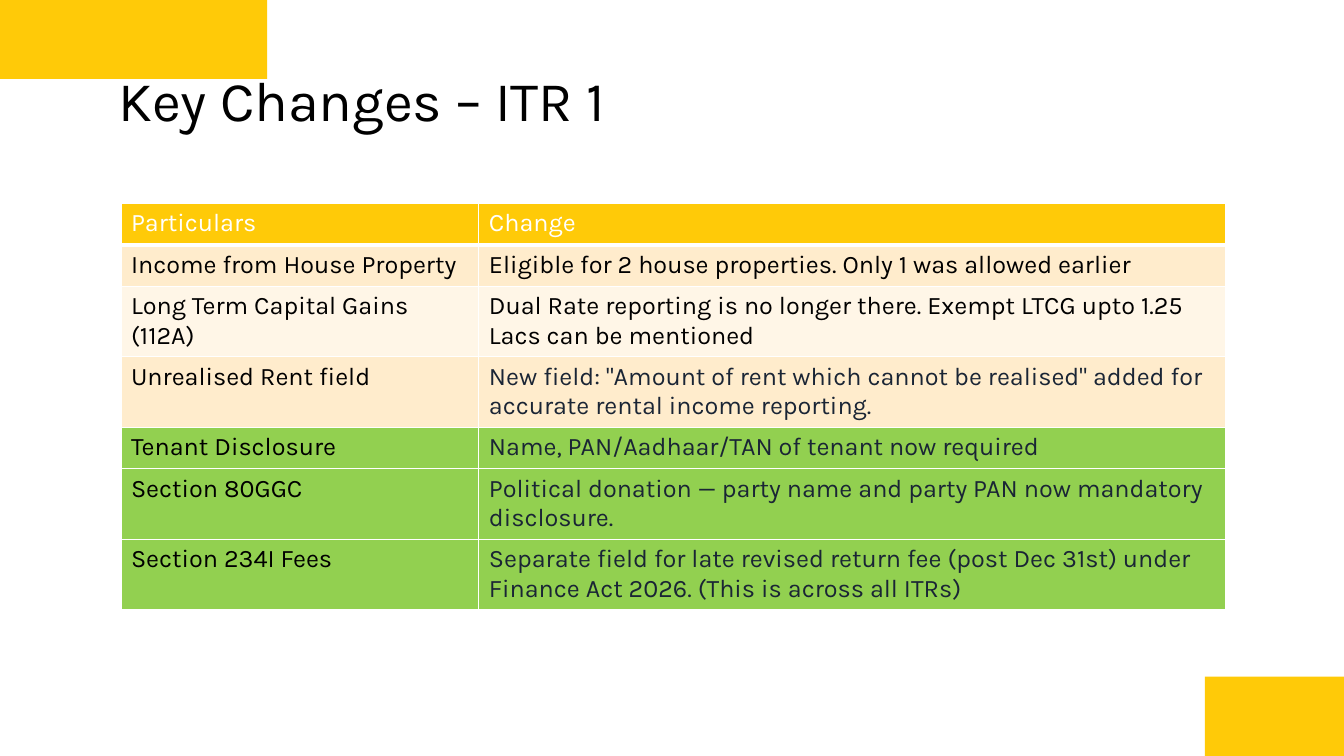
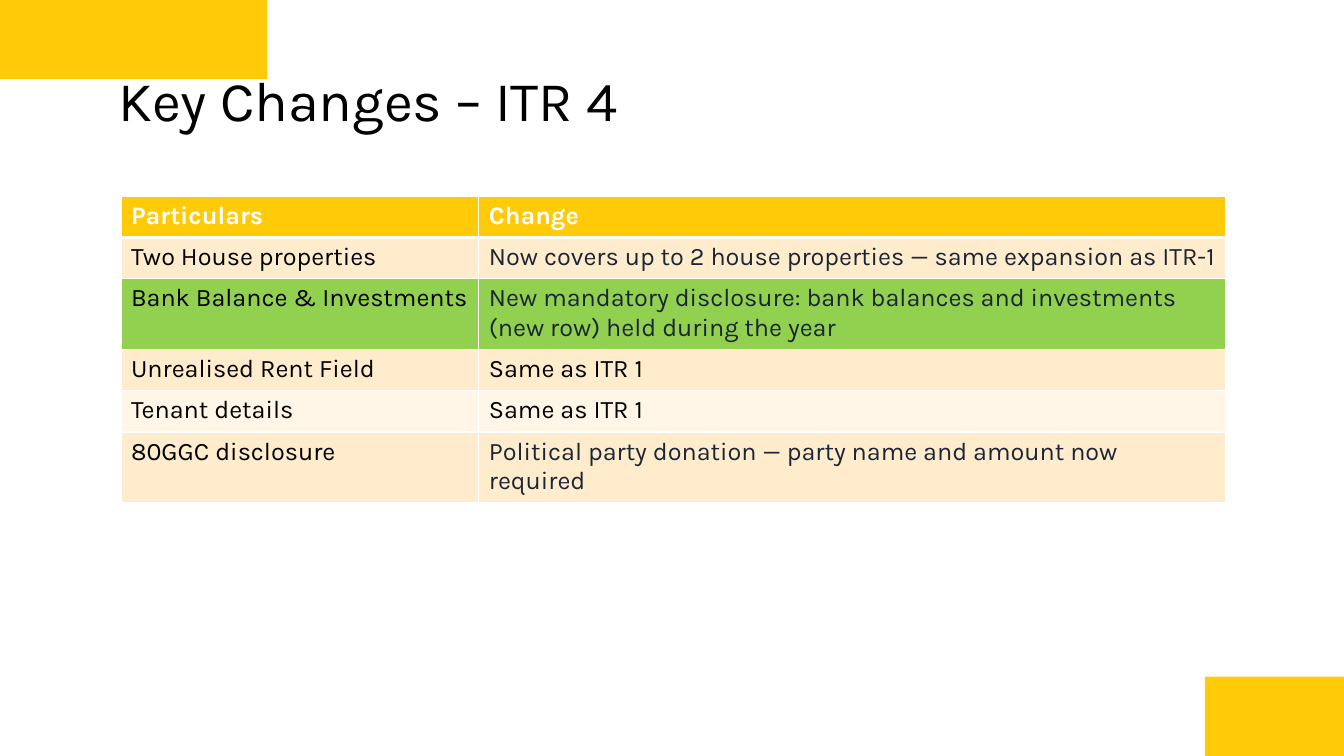
from pptx import Presentation
from pptx.dml.color import RGBColor
from pptx.enum.shapes import MSO_SHAPE
from pptx.enum.text import MSO_ANCHOR
from pptx.oxml import parse_xml
from pptx.oxml.ns import nsdecls
from pptx.util import Inches, Pt

RECTANGLE = MSO_SHAPE.RECTANGLE
MIDDLE = MSO_ANCHOR.MIDDLE

FONT = "Karla"
GOLD, GREEN = "FFCA08", "92D050"
STRIPES = ("FFECCC", "FFF6E7")
WHITE, BLACK, NAVY = "FFFFFF", "000000", "1A2535"

# Lengths are percent of the slide's width (x) and height (y).
BANDS = ((89.65, 89.5, 10.35, 10.5), (0, 0, 19.88, 10.45))
TITLE_BOX = (8.78, 5.33, 82.5, 15.6)
TABLE_LEFT = 9
COLUMN_WIDTHS = (26.63, 55.59)
ROW_HEIGHT = 5.47
HEADER = ("Particulars", "Change")


def rgb(hex_string):
    return RGBColor.from_string(hex_string)


class Deck:
    """Holds the shared style and the slide being built."""

    def __init__(self):
        self.prs = Presentation()
        self.prs.slide_width = Inches(13.33)
        self.prs.slide_height = Inches(7.5)
        self.slide = None

    def x(self, percent):
        return round(self.prs.slide_width * percent / 100)

    def y(self, percent):
        return round(self.prs.slide_height * percent / 100)

    def box(self, left, top, width, height):
        return self.x(left), self.y(top), self.x(width), self.y(height)

    def new_slide(self, title):
        self.slide = self.prs.slides.add_slide(self.prs.slide_layouts[6])
        for band in BANDS:
            self.band(band)
        self.title(title)

    def band(self, place):
        band = self.slide.shapes.add_shape(RECTANGLE, *self.box(*place))
        band.shadow.inherit = False
        band.fill.solid()
        band.fill.fore_color.rgb = rgb(GOLD)
        band.line.fill.background()

    def title(self, text):
        frame = self.slide.shapes.add_textbox(*self.box(*TITLE_BOX)).text_frame
        layout = {"word_wrap": True, "vertical_anchor": MIDDLE,
                  "margin_left": 0, "margin_right": 0,
                  "margin_top": 0, "margin_bottom": 0}
        for name, value in layout.items():
            setattr(frame, name, value)
        self.add_text(frame, text, BLACK, 40)

    def add_text(self, frame, text, color, size, bold=False):
        run = frame.paragraphs[0].add_run()
        run.text = text
        for name, value in {"name": FONT, "size": Pt(size), "bold": bold}.items():
            setattr(run.font, name, value)
        run.font.color.rgb = rgb(color)

    def cell(self, cell, text, ink, fill, top=1, bottom=1, bold=False):
        """Fill one cell; top and bottom are border widths in points."""
        properties = cell._tc.get_or_add_tcPr()
        for side, width in (("L", 1), ("R", 1), ("T", top), ("B", bottom)):
            properties.append(parse_xml(
                f'<a:ln{side} {nsdecls("a")} w="{Pt(width)}"><a:solidFill>'
                f'<a:srgbClr val="{WHITE}"/></a:solidFill></a:ln{side}>'))
        cell.fill.solid()
        cell.fill.fore_color.rgb = rgb(fill)
        self.add_text(cell.text_frame, text, ink, 18, bold)

    def change_table(self, top, changes, bold_header):
        """Each change is (particular, change, ink of the change, is highlighted)."""
        place = self.box(TABLE_LEFT, top, sum(COLUMN_WIDTHS),
                         ROW_HEIGHT * (len(changes) + 1))
        table = self.slide.shapes.add_table(
            len(changes) + 1, len(COLUMN_WIDTHS), *place).table
        table.horz_banding = False
        for column, width in zip(table.columns, COLUMN_WIDTHS):
            column.width = self.x(width)
        for row in table.rows:
            row.height = self.y(ROW_HEIGHT)
        for column, heading in enumerate(HEADER):
            self.cell(table.cell(0, column), heading, WHITE, GOLD,
                      bottom=3, bold=bold_header)
        for row, (particular, change, ink, highlighted) in enumerate(changes, 1):
            fill = GREEN if highlighted else STRIPES[(row - 1) % 2]
            top_border = 3 if row == 1 else 1
            self.cell(table.cell(row, 0), particular, BLACK, fill, top_border)
            self.cell(table.cell(row, 1), change, ink, fill, top_border)


ITR_1 = (
    ("Income from House Property",
     "Eligible for 2 house properties. Only 1 was allowed earlier", BLACK, False),
    ("Long Term Capital Gains (112A)",
     "Dual Rate reporting is no longer there. Exempt LTCG upto 1.25 Lacs "
     "can be mentioned", BLACK, False),
    ("Unrealised Rent field",
     'New field: "Amount of rent which cannot be realised" added for '
     "accurate rental income reporting.", NAVY, False),
    ("Tenant Disclosure",
     "Name, PAN/Aadhaar/TAN of tenant now required", NAVY, True),
    ("Section 80GGC",
     "Political donation — party name and party PAN now mandatory disclosure.",
     NAVY, True),
    ("Section 234I Fees",
     "Separate field for late revised return fee (post Dec 31st) under "
     "Finance Act 2026. (This is across all ITRs)", NAVY, True),
)
ITR_4 = (
    ("Two House properties",
     "Now covers up to 2 house properties — same expansion as ITR-1", NAVY, False),
    ("Bank Balance & Investments",
     "New mandatory disclosure: bank balances and investments (new row) "
     "held during the year", NAVY, True),
    ("Unrealised Rent Field", "Same as ITR 1", BLACK, False),
    ("Tenant details", "Same as ITR 1", BLACK, False),
    ("80GGC disclosure",
     "Political party donation — party name and amount now required", NAVY, False),
)


def main():
    deck = Deck()
    for title, top, changes, bold_header in (
            ("Key Changes – ITR 1", 26.93, ITR_1, False),
            ("Key Changes – ITR 4", 25.93, ITR_4, True)):
        deck.new_slide(title)
        deck.change_table(top, changes, bold_header)
    deck.prs.save("out.pptx")


if __name__ == "__main__":
    main()
